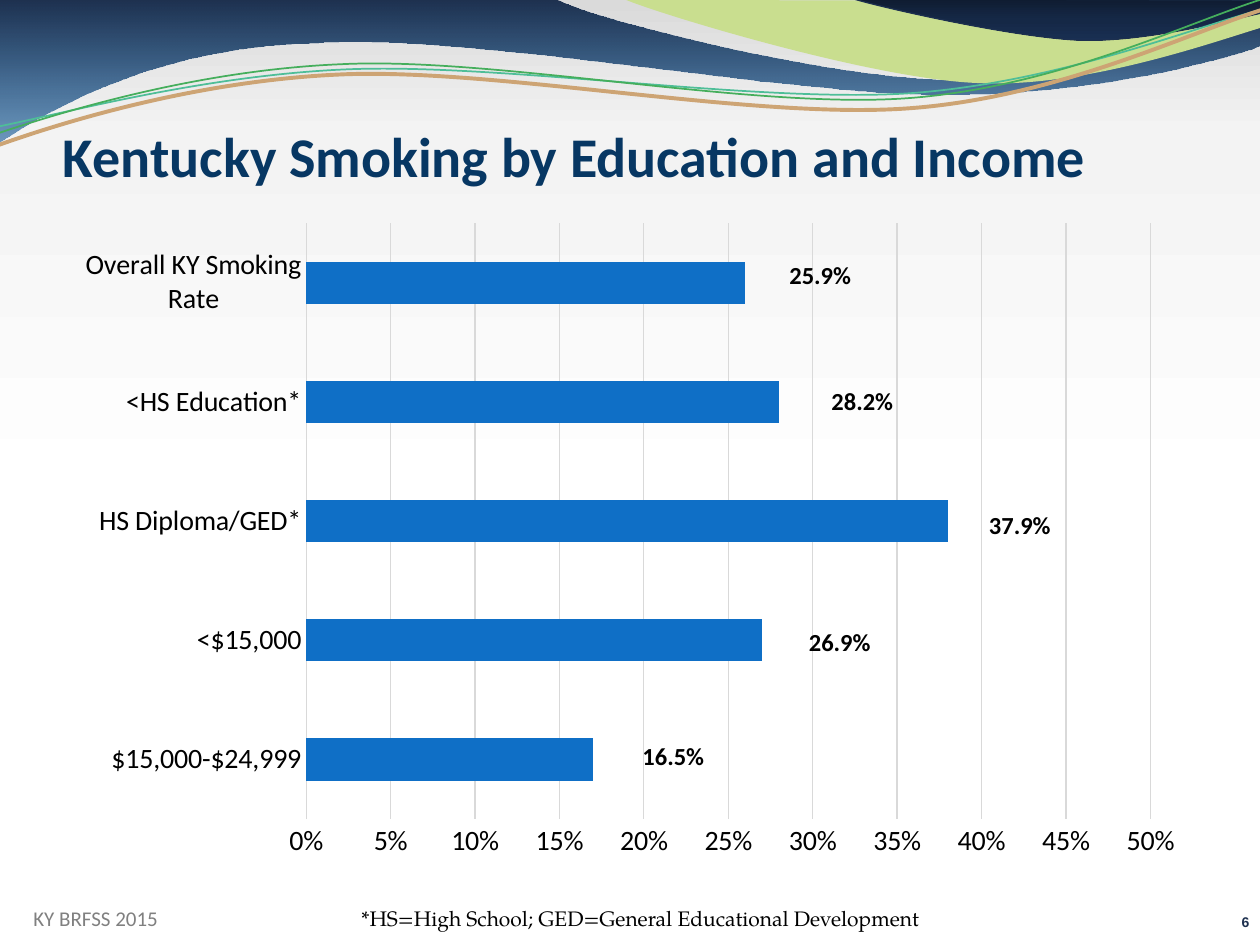
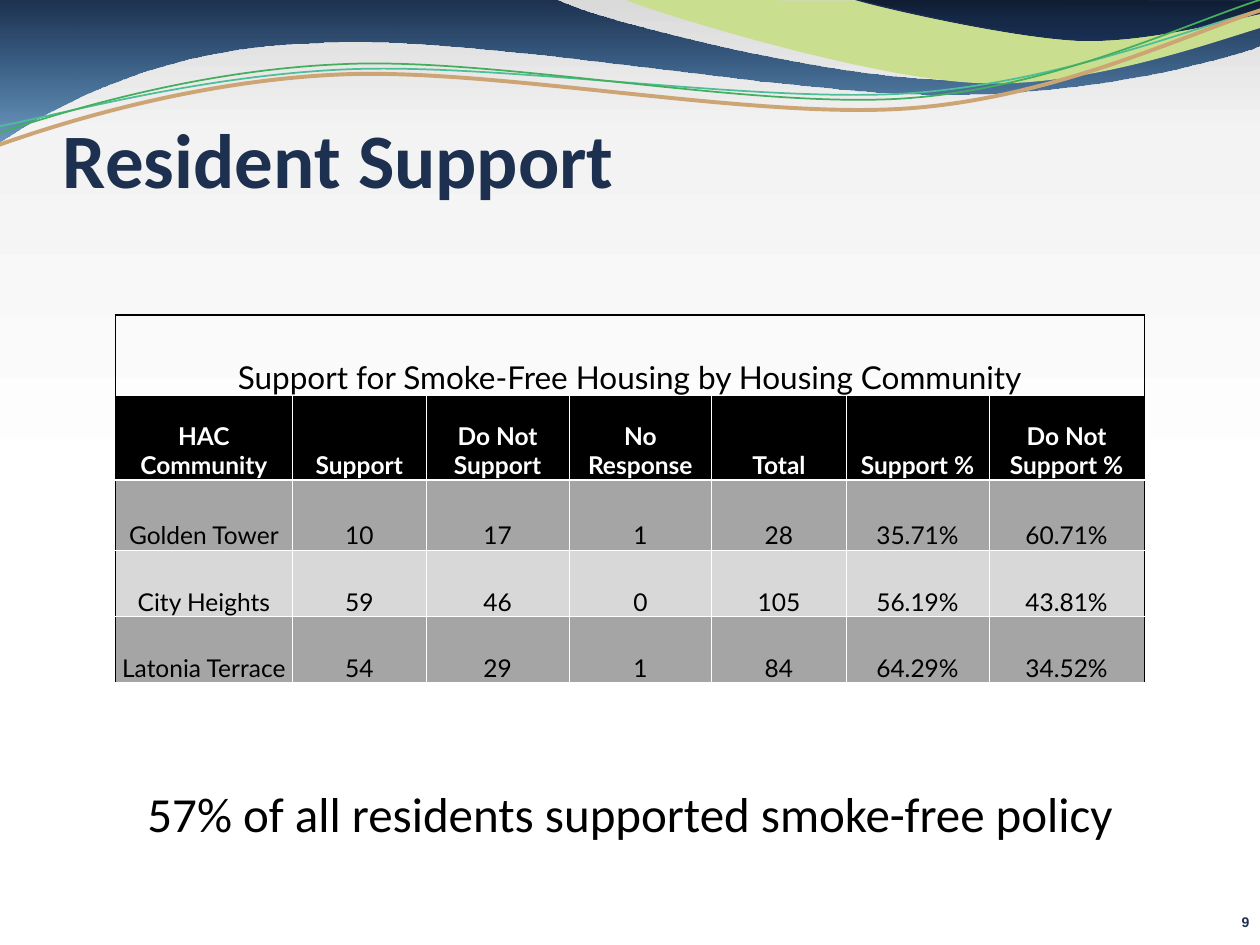
from lxml.etree import SubElement
from pptx import Presentation
from pptx.chart.data import CategoryChartData
from pptx.dml.color import RGBColor
from pptx.enum.chart import XL_CHART_TYPE, XL_TICK_MARK
from pptx.enum.text import MSO_ANCHOR, PP_ALIGN
from pptx.oxml.ns import qn
from pptx.util import Inches, Pt

NAVY = RGBColor(0x1D, 0x30, 0x4F)
TITLE_BLUE = RGBColor(0x07, 0x37, 0x63)
BAR_BLUE = RGBColor(0x0F, 0x6F, 0xC6)
DEEP_BLUE = RGBColor(0x00, 0x4C, 0x90)
MIDNIGHT = RGBColor(0x0F, 0x1C, 0x31)
MIDNIGHT_MIDDLE = RGBColor(0x15, 0x28, 0x46)
MIDNIGHT_LIGHT = RGBColor(0x19, 0x2F, 0x53)
LIME = RGBColor(0xC9, 0xDE, 0x8F)
TEAL = RGBColor(0x4E, 0xBE, 0x98)
TAN = RGBColor(0xCD, 0xA4, 0x74)
GREEN = RGBColor(0x45, 0xAE, 0x5C)
BLACK = RGBColor(0x00, 0x00, 0x00)
WHITE = RGBColor(0xFF, 0xFF, 0xFF)
PALE = RGBColor(0xF3, 0xF3, 0xF3)
SILVER = RGBColor(0xDA, 0xDA, 0xDA)
GRID_GRAY = RGBColor(0xD9, 0xD9, 0xD9)
SOURCE_GRAY = RGBColor(0x80, 0x80, 0x80)
ROW_DARK = RGBColor(0xA5, 0xA5, 0xA5)
ROW_LIGHT = RGBColor(0xD8, 0xD8, 0xD8)

presentation = Presentation()
presentation.slide_width = Inches(10)
presentation.slide_height = Inches(7.5)
COLUMN = presentation.slide_width // 120
ROW = presentation.slide_height // 90
UNIT = presentation.slide_width // 10  # a tenth of the width, for the waves


def set_gradient(owner, fill, stops, angle):
    """Each stop is position, colour, opacity in percent."""
    fill.gradient()
    stop_list = next(owner.element.iter(qn("a:gsLst")))
    for old_stop in list(stop_list):
        stop_list.remove(old_stop)
    for position, color, opacity in stops:
        stop = SubElement(stop_list, qn("a:gs"), pos=str(position * 1000))
        paint = SubElement(stop, qn("a:srgbClr"), val=str(color))
        if opacity < 100:
            SubElement(paint, qn("a:alpha"), val=str(opacity * 1000))
    next(owner.element.iter(qn("a:lin"))).set("ang", str(angle * 60000))


def write(frame, text, color, align=PP_ALIGN.LEFT, insets=None, **font_format):
    frame.word_wrap = True
    for side, inset in (insets or {}).items():
        setattr(frame, "margin_" + side, inset)
    paragraph = frame.paragraphs[0]
    paragraph.alignment = align
    run = paragraph.add_run()
    run.text = text
    for name, value in font_format.items():
        setattr(run.font, name, value)
    run.font.color.rgb = color


NO_INSETS = dict(left=0, top=0, right=0, bottom=0)

# Waves: start point, then line ends (2 numbers) and Bézier curves (6 numbers)
waves = [
    dict(path=[(0, 0), (4.4, -0.01), (4.76, 0.17, 6.64, 0.63, 7.58, 0.63),
               (8.53, 0.63, 9.58, 0.26, 10, 0.09), (10.01, 0.36),
               (9.83, 0.44, 8.7, 0.76, 7.46, 0.75), (6.22, 0.75, 3.82, 0.28, 2.57, 0.34),
               (1.29, 0.36, 0.46, 0.83, -0.01, 1.13), (0, 0)],
         stops=[(0, NAVY, 100), (100, DEEP_BLUE, 55)]),
    dict(path=[(4.97, 0), (5.26, 0.12, 6.93, 0.63, 7.77, 0.66),
               (8.61, 0.7, 9.64, 0.33, 10.01, 0.22), (10.01, 0.01), (4.97, 0)],
         fill=LIME),
    dict(path=[(6.77, -0.01), (6.96, 0.05, 8.04, 0.3, 8.59, 0.32),
               (9.13, 0.33, 9.79, 0.15, 10.03, 0.1), (10.03, 0), (6.77, -0.01)],
         stops=[(0, MIDNIGHT, 100), (50, MIDNIGHT_MIDDLE, 100), (100, MIDNIGHT_LIGHT, 100)],
         line=(NAVY, 0.75)),
    dict(path=[(-0.15, 1.03), (0.33, 0.95, 1.53, 0.6, 2.76, 0.55),
               (3.99, 0.5, 6, 0.82, 7.22, 0.74), (8.45, 0.65, 9.53, 0.19, 10.14, 0.04)],
         line=(TEAL, 1)),
    dict(path=[(-0.12, 1.19), (0.37, 1.01, 1.5, 0.64, 2.72, 0.59),
               (3.95, 0.54, 5.97, 0.95, 7.21, 0.86), (8.45, 0.77, 9.53, 0.21, 10.14, 0.04)],
         line=(TAN, 2.25)),
    dict(path=[(-0.14, 1.1), (0.36, 0.93, 1.49, 0.56, 2.71, 0.51),
               (3.93, 0.45, 5.96, 0.87, 7.2, 0.78), (8.44, 0.69, 9.52, 0.13, 10.13, -0.04)],
         line=(GREEN, 1)),
]

# Shared design: background, waves, title and slide number
slides = []
for title, title_size, title_color, title_row, number in [
    ("Kentucky Smoking by Education and Income", 32, TITLE_BLUE, 11, "6"),
    ("Resident Support", 44, NAVY, 10, "9"),
]:
    slide = presentation.slides.add_slide(presentation.slide_layouts[6])
    slides.append(slide)
    set_gradient(slide, slide.background.fill,
                 [(47, WHITE, 100), (86, PALE, 100), (100, SILVER, 100)], 270)

    for wave in waves:
        points = [(round(x * UNIT), round(y * UNIT))
                  for segment in wave["path"] for x, y in zip(segment[::2], segment[1::2])]
        builder = slide.shapes.build_freeform(*points[0])
        builder.add_line_segments(points[1:], close="fill" in wave or "stops" in wave)
        shape = builder.convert_to_shape()
        # Join the three points of each curve into one Bézier segment
        line_steps = shape.element.iter(qn("a:lnTo"))
        line_steps = iter(list(line_steps))
        for segment in wave["path"][1:]:
            steps = [next(line_steps) for _ in range(len(segment) // 2)]
            if len(steps) == 3:
                curve = SubElement(steps[0].getparent(), qn("a:cubicBezTo"))
                steps[0].addprevious(curve)
                for step in steps:
                    curve.append(step[0])
                    step.getparent().remove(step)
        shape.shadow.inherit = False
        if "stops" in wave:
            set_gradient(shape, shape.fill, wave["stops"], 90)
        elif "fill" in wave:
            shape.fill.solid()
            shape.fill.fore_color.rgb = wave["fill"]
        else:
            shape.fill.background()
        if "line" in wave:
            shape.line.color.rgb = wave["line"][0]
            shape.line.width = Pt(wave["line"][1])
        else:
            shape.line.fill.background()

    number_box = slide.shapes.add_textbox(COLUMN, 87 * ROW, 118 * COLUMN, 3 * ROW)
    write(number_box.text_frame, number, NAVY, PP_ALIGN.RIGHT, NO_INSETS,
          name="Arial", size=Pt(8), bold=True)
    title_box = slide.shapes.add_textbox(6 * COLUMN, title_row * ROW, 108 * COLUMN, 11 * ROW)
    write(title_box.text_frame, title, title_color, insets=dict(NO_INSETS, top=Inches(0.05)),
          name="Calibri", size=Pt(title_size), bold=True)

smoking_slide, support_slide = slides

# Smoking rate chart
chart_data = CategoryChartData(number_format="0%")
chart_data.categories = ["$15,000-$24,999", "<$15,000", "HS Diploma/GED*",
                         "<HS Education*", "Overall KY Smoking Rate"]
chart_data.add_series("Series 1", [0.17, 0.27, 0.38, 0.28, 0.26])
chart = smoking_slide.shapes.add_chart(XL_CHART_TYPE.BAR_CLUSTERED, 6 * COLUMN, 20 * ROW,
                                       108 * COLUMN, 63 * ROW, chart_data).chart
chart.has_legend = False
chart.has_title = False
chart.font.name = "Calibri"
chart.font.size = Pt(16)
chart.font.color.rgb = BLACK
plot = chart.plots[0]
plot.gap_width = 182
plot.vary_by_categories = False
plot.series[0].format.fill.solid()
plot.series[0].format.fill.fore_color.rgb = BAR_BLUE

category_axis, value_axis = chart.category_axis, chart.value_axis
for axis in (category_axis, value_axis):
    axis.major_tick_mark = XL_TICK_MARK.NONE
    axis.minor_tick_mark = XL_TICK_MARK.NONE
category_axis.has_major_gridlines = False
for name, value in dict(minimum_scale=0, maximum_scale=0.5, major_unit=0.05,
                        has_major_gridlines=True).items():
    setattr(value_axis, name, value)
value_axis.tick_labels.number_format = "0%"
value_axis.tick_labels.number_format_is_linked = False
value_axis.format.line.fill.background()
for line in (category_axis.format.line, value_axis.major_gridlines.format.line):
    line.color.rgb = GRID_GRAY
    line.width = Pt(0.75)

# Rates beside the bars: text, column, row, width in columns
for rate, column, row, width in [
    ("25.9%", 74, 24.15, 12), ("28.2%", 78, 36.15, 10), ("37.9%", 93, 48, 9),
    ("26.9%", 75.85, 59.15, 10.2), ("16.5%", 60, 70, 9),
]:
    rate_box = smoking_slide.shapes.add_textbox(
        round(column * COLUMN), round(row * ROW), round(width * COLUMN), 4 * ROW)
    write(rate_box.text_frame, rate, BLACK, name="Calibri", size=Pt(14), bold=True)

# Source and footnote
for text, column, width, color, align, font in [
    ("*HS=High School; GED=General Educational Development", 32, 58, BLACK,
     PP_ALIGN.CENTER, "TeX Gyre Pagella"),
    ("KY BRFSS 2015", 2, 19, SOURCE_GRAY, PP_ALIGN.LEFT, "Calibri"),
]:
    note_box = smoking_slide.shapes.add_textbox(
        column * COLUMN, round(85.7 * ROW), width * COLUMN, round(3.6 * ROW))
    write(note_box.text_frame, text, color, align, name=font, size=Pt(12))

# Support table
table_rows = [
    ["Support for Smoke-Free Housing by Housing Community"] + [""] * 6,
    ["HAC Community", "Support", "Do Not Support", "No Response", "Total",
     "Support %", "Do Not Support %"],
    ["Golden Tower", "10", "17", "1", "28", "35.71%", "60.71%"],
    ["City Heights", "59", "46", "0", "105", "56.19%", "43.81%"],
    ["Latonia Terrace", "54", "29", "1", "84", "64.29%", "34.52%"],
]
column_widths = [16.85, 12.75, 13.6, 13.6, 12.8, 13.6, 14.8]
row_heights = [7.75, 7.95, 6.7, 6.3, 6.3]
row_fills = [None, BLACK, ROW_DARK, ROW_LIGHT, ROW_DARK]
# Rules above each row, and the one below the last
row_rules = [(BLACK, 1), (BLACK, 0.5), (WHITE, 1.5), (WHITE, 0.5), (WHITE, 0.5), (WHITE, 0.5)]
column_rules = [(BLACK, 1)] + [(WHITE, 0.5)] * 6 + [(BLACK, 1)]

table = support_slide.shapes.add_table(5, 7, 11 * COLUMN, 30 * ROW, 98 * COLUMN, 35 * ROW).table
table.first_row = False
table.horz_banding = False
for table_column, width in zip(table.columns, column_widths):
    table_column.width = round(width * COLUMN)
for table_row, height in zip(table.rows, row_heights):
    table_row.height = round(height * ROW)
table.cell(0, 0).merge(table.cell(0, 6))

for row, texts in enumerate(table_rows):
    for column, text in enumerate(texts):
        cell = table.cell(row, column)
        cell.vertical_anchor = MSO_ANCHOR.BOTTOM
        for side, inset in NO_INSETS.items():
            setattr(cell, "margin_" + side, inset)
        if text:
            write(cell.text_frame, text, WHITE if row == 1 else BLACK, PP_ALIGN.CENTER,
                  name="Lato", size=Pt(18 if row == 0 else 14), bold=row == 1)
            cell.text_frame.paragraphs[0].space_after = Pt(14)
        if row_fills[row] is None:
            cell.fill.background()
        else:
            cell.fill.solid()
            cell.fill.fore_color.rgb = row_fills[row]
        properties = cell._tc.get_or_add_tcPr()
        right_rule = column_rules[-1] if row == 0 else column_rules[column + 1]
        edges = [("a:lnL", column_rules[column]), ("a:lnR", right_rule),
                 ("a:lnT", row_rules[row]), ("a:lnB", row_rules[row + 1])]
        for position, (tag, (color, width)) in enumerate(edges):
            border = SubElement(properties, qn(tag), w=str(Pt(width)))
            SubElement(SubElement(border, qn("a:solidFill")), qn("a:srgbClr"), val=str(color))
            properties.insert(position, border)

# Conclusion
conclusion_box = support_slide.shapes.add_textbox(11 * COLUMN, 74 * ROW, 98 * COLUMN, 7 * ROW)
write(conclusion_box.text_frame, "57% of all residents supported smoke-free policy", BLACK,
      PP_ALIGN.CENTER, name="Calibri", size=Pt(28))

presentation.save("out.pptx")
